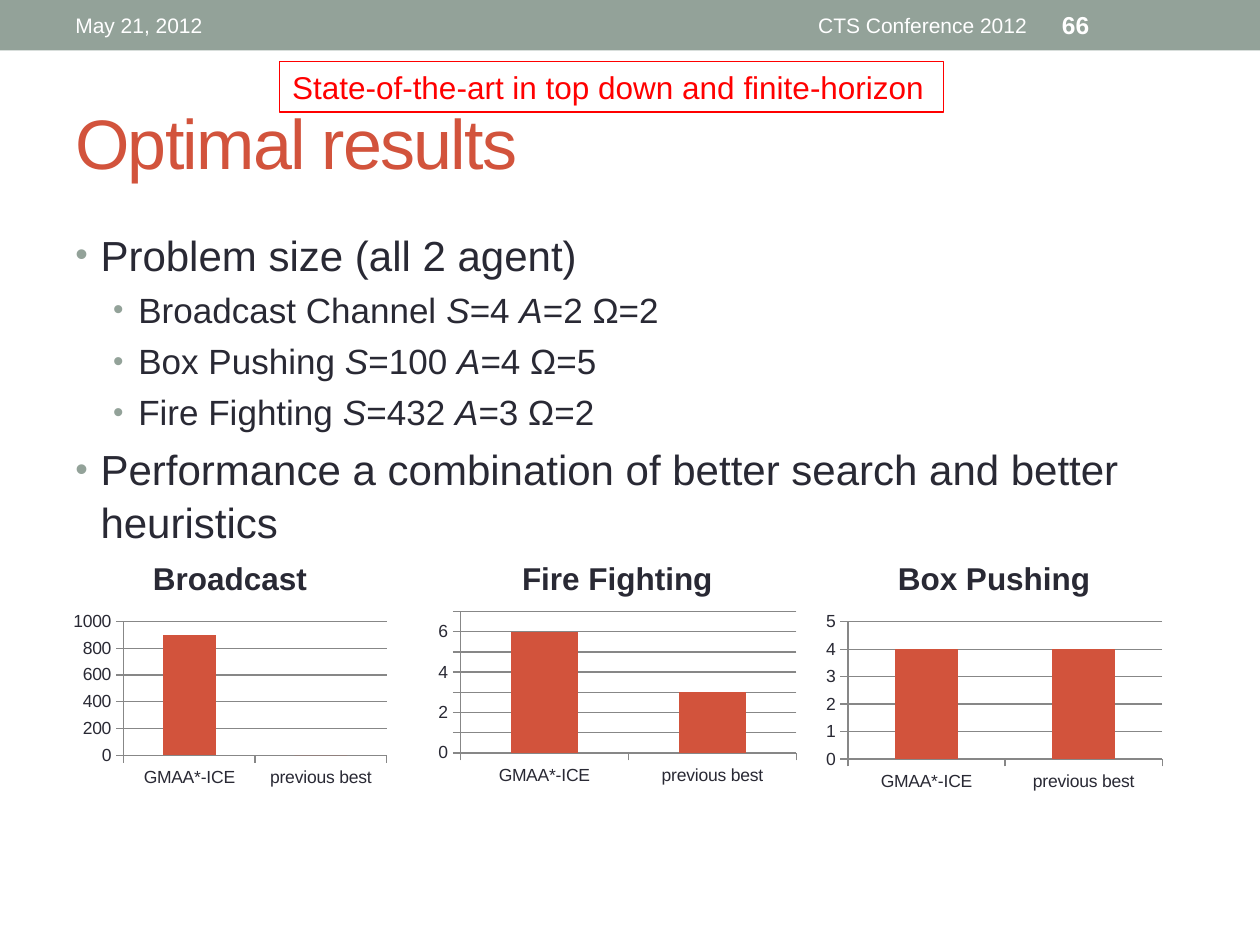
from pptx import Presentation
from pptx.chart.data import CategoryChartData
from pptx.dml.color import RGBColor
from pptx.enum.chart import XL_CHART_TYPE, XL_TICK_MARK
from pptx.enum.shapes import MSO_SHAPE
from pptx.enum.text import MSO_ANCHOR, PP_ALIGN
from pptx.oxml.ns import qn
from pptx.util import Inches, Pt
from lxml import etree

COLUMN = XL_CHART_TYPE.COLUMN_CLUSTERED
TICK_OUT, TICK_NONE = XL_TICK_MARK.OUTSIDE, XL_TICK_MARK.NONE
RECTANGLE = MSO_SHAPE.RECTANGLE
TOP, MIDDLE = MSO_ANCHOR.TOP, MSO_ANCHOR.MIDDLE
LEFT, RIGHT = PP_ALIGN.LEFT, PP_ALIGN.RIGHT

FONT = "Arial"
COLORS = {"band": "93A299", "accent": "D2533C", "ink": "292934",
          "white": "FFFFFF", "note": "FF0000", "axis": "878787"}

OUTLINE = [
    (0, ["Problem size (all 2 agent)"]),
    (1, ["Broadcast Channel ", "S", "=4 ", "A", "=2 Ω=2"]),
    (1, ["Box Pushing", " S", "=100 ", "A", "=4 Ω=5"]),
    (1, ["Fire Fighting ", "S", "=432 ", "A", "=3 Ω=2"]),
    (0, ["Performance a combination of better search and better heuristics"]),
]
LEVELS = [{"size": 24, "indent": 0.2}, {"size": 20, "indent": 0.5}]
HANGING = 0.2

METHODS = ["GMAA*-ICE", "previous best"]
RESULTS = [
    ("Broadcast", "Series 1", [900, 0], 1000, 200, (0.53, 4.29, 2.59, 2)),
    ("Fire Fighting", "Series 1", [6, 3], 7, 1, (3.42, 4.29, 2.96, 1.98)),
    ("Box Pushing", "Box Pushing", [4, 4], 5, 1, (6.5, 4.29, 2.78, 2.03)),
]


def rgb(name):
    return RGBColor.from_string(COLORS[name])


def style_font(font, size, color, bold=False, italic=False):
    font.name, font.size = FONT, Pt(size)
    font.bold, font.italic = bold, italic
    font.color.rgb = rgb(color)


def add_text(slide, text, box, size=12, color="white", bold=False, align=LEFT,
             anchor=MIDDLE, wrap=True, tracking=None, border=None):
    label = slide.shapes.add_textbox(*map(Inches, box))
    frame = label.text_frame
    frame.word_wrap, frame.vertical_anchor = wrap, anchor
    paragraph = frame.paragraphs[0]
    paragraph.alignment = align
    run = paragraph.add_run()
    run.text = text
    style_font(run.font, size, color, bold)
    if tracking:
        run.font._element.set("spc", str(tracking * 100))
    if border:
        label.line.color.rgb = rgb(border)
        label.line.width = Pt(0.75)
    return label


def add_bullet(paragraph, indent):
    properties = paragraph._p.get_or_add_pPr()
    properties.set("marL", str(Inches(indent)))
    properties.set("indent", str(-Inches(HANGING)))
    color = etree.SubElement(properties, qn("a:buClr"))
    etree.SubElement(color, qn("a:srgbClr"), val=COLORS["band"])
    etree.SubElement(properties, qn("a:buSzPct"), val="85000")
    etree.SubElement(properties, qn("a:buFont"), typeface=FONT)
    etree.SubElement(properties, qn("a:buChar"), char="•")


def add_outline(slide, items, box):
    frame = slide.shapes.add_textbox(*map(Inches, box)).text_frame
    frame.word_wrap = True
    for index, (level, pieces) in enumerate(items):
        paragraph = frame.add_paragraph() if index else frame.paragraphs[0]
        size = LEVELS[level]["size"]
        paragraph.level = level
        add_bullet(paragraph, LEVELS[level]["indent"])
        paragraph.line_spacing = 1.05
        paragraph.space_before = Pt(size * 0.2 if index else 0)
        for position, piece in enumerate(pieces):
            run = paragraph.add_run()
            run.text = piece
            style_font(run.font, size, "ink", italic=position % 2 == 1)


def add_result_chart(slide, title, series_name, values, top, step, box):
    data = CategoryChartData()
    data.categories = METHODS
    data.add_series(series_name, values)
    chart = slide.shapes.add_chart(COLUMN, *map(Inches, box), data).chart
    style_font(chart.font, 10, "ink")
    chart.has_legend = False
    chart.has_title = True
    heading = chart.chart_title.text_frame
    heading.text = title
    style_font(heading.paragraphs[0].runs[0].font, 18, "ink", bold=True)

    plot = chart.plots[0]
    plot.gap_width, plot.vary_by_categories = 150, False
    bars = plot.series[0].format.fill
    bars.solid()
    bars.fore_color.rgb = rgb("accent")

    scale = chart.value_axis
    scale.minimum_scale, scale.maximum_scale = 0, top
    scale.major_unit = step
    scale.has_major_gridlines = True
    for axis in (chart.category_axis, scale):
        axis.major_tick_mark, axis.minor_tick_mark = TICK_OUT, TICK_NONE
    for part in (chart.category_axis, scale, scale.major_gridlines):
        part.format.line.color.rgb = rgb("axis")
        part.format.line.width = Pt(0.75)


def add_header(slide):
    band = slide.shapes.add_shape(RECTANGLE, 0, 0, Inches(10), Inches(0.4))
    band.shadow.inherit = False
    band.fill.solid()
    band.fill.fore_color.rgb = rgb("band")
    band.line.fill.background()
    add_text(slide, "May 21, 2012", (0.5, 0.02, 3.17, 0.36))
    add_text(slide, "CTS Conference 2012", (3.75, 0.02, 4.5, 0.36), align=RIGHT)
    add_text(slide, "66", (8.33, 0.02, 1.17, 0.36), size=14, bold=True)


def main():
    deck = Presentation()
    deck.slide_width, deck.slide_height = Inches(10), Inches(7.5)
    slide = deck.slides.add_slide(deck.slide_layouts[6])
    add_header(slide)
    add_text(slide, "Optimal results", (0.5, 0.58, 9, 1.08), size=40,
             color="accent", tracking=-1)
    add_outline(slide, OUTLINE, (0.5, 1.75, 9, 5.33))
    for result in RESULTS:
        add_result_chart(slide, *result)
    add_text(slide, "State-of-the-art in top down and finite-horizon",
             (2.22, 0.49, 5.27, 0.4), size=18, color="note", anchor=TOP,
             wrap=False, border="note")
    deck.save("out.pptx")


if __name__ == "__main__":
    main()
